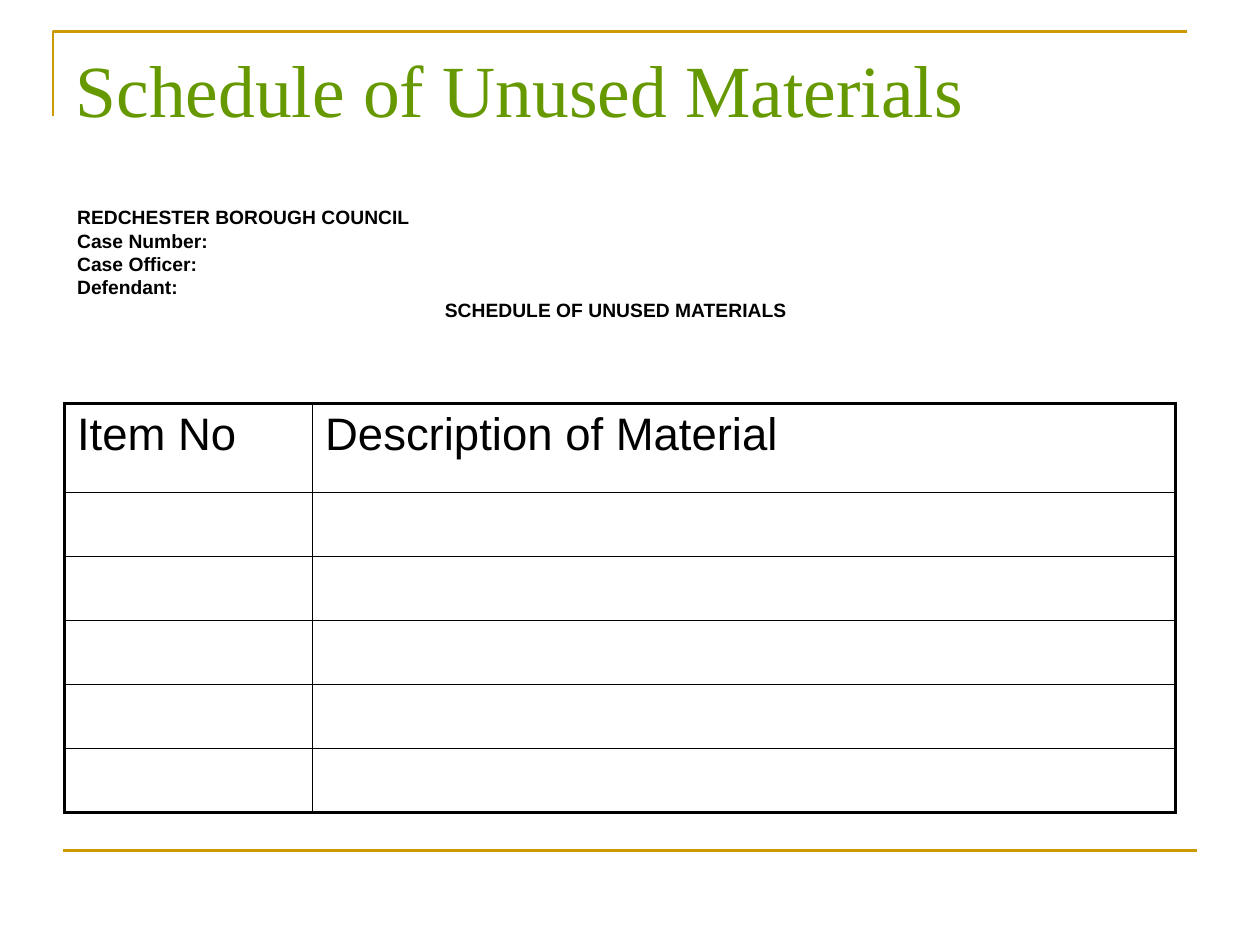
from lxml import etree
from pptx import Presentation
from pptx import util as u
from pptx.dml.color import RGBColor
from pptx.enum import shapes, text
from pptx.oxml.ns import qn


def color(value):
    return RGBColor.from_string(value)


def border(cell, side, width):
    ln = etree.SubElement(cell._tc.get_or_add_tcPr(), qn("a:" + side), w=str(u.Pt(width)))
    fill = etree.SubElement(ln, qn("a:solidFill"))
    etree.SubElement(fill, qn("a:srgbClr"), val="000000")


prs = Presentation()
prs.slide_width, prs.slide_height = u.Cm(25.4), u.Cm(19.05)
s = prs.slides.add_slide(prs.slide_layouts[1])

fb = s.shapes.build_freeform(u.Cm(1.07), u.Cm(2.34))
fb.add_line_segments([(u.Cm(1.07), u.Cm(0.64)), (u.Cm(23.93), u.Cm(0.64))], close=False)
corner = fb.convert_to_shape()
corner.shadow.inherit = False
corner.fill.background()
rule = s.shapes.add_connector(shapes.MSO_CONNECTOR.STRAIGHT,
                              u.Cm(1.27), u.Cm(17.15), u.Cm(24.13), u.Cm(17.15))
etree.SubElement(rule._element.spPr, qn("a:effectLst"))
for sp in (corner, rule):
    sp.line.color.rgb = color("CC9900")
    sp.line.width = u.Pt(1.5)

title, body = s.shapes.title, s.placeholders[1]
title.left, title.top, title.width, title.height = u.Cm(1.27), u.Cm(0.76), u.Cm(22.86), u.Cm(3.18)
body.left, body.top, body.width, body.height = u.Cm(1.3), u.Cm(4.11), u.Cm(22.23), u.Cm(3)
for sp in (title, body):
    sp.text_frame.auto_size = text.MSO_AUTO_SIZE.NONE
    sp.text_frame.vertical_anchor = text.MSO_ANCHOR.TOP

title.text_frame.text = "Schedule of Unused Materials"
p = title.text_frame.paragraphs[0]
p.alignment = text.PP_ALIGN.LEFT
r = p.runs[0]
r.font.name, r.font.size = "Times New Roman", u.Pt(42)
r.font.color.rgb = color("669900")

body.text_frame.text = "\n".join(["REDCHESTER BOROUGH COUNCIL", "Case Number:", "Case Officer:",
                                  "Defendant:", "SCHEDULE OF UNUSED MATERIALS"])
for p in body.text_frame.paragraphs:
    p.line_spacing, p.space_before = 0.8, u.Pt(2.7)
    pPr = p._p.get_or_add_pPr()
    pPr.set("marL", "0")
    pPr.set("indent", "0")
    etree.SubElement(pPr, qn("a:buNone"))
    r = p.runs[0]
    r.font.name, r.font.size, r.font.bold = "Arial", u.Pt(11), True
    r.font.color.rgb = color("000000")
p.alignment = text.PP_ALIGN.CENTER

headers = ["Item No", "Description of Material"]
n_rows = 6
tbl = s.shapes.add_table(n_rows, len(headers), u.Cm(1.3), u.Cm(8.13), u.Cm(22.4), u.Cm(8.25)).table
tbl.first_row = tbl.horz_banding = False
tbl.columns[0].width, tbl.columns[1].width = u.Cm(5), u.Cm(17.4)
for i, row in enumerate(tbl.rows):
    row.height = u.Cm(1.29 if i else 1.8)
    for j, cell in enumerate(row.cells):
        border(cell, "lnL", 1 if j else 2.25)
        border(cell, "lnR", 2.25 if j else 1)
        border(cell, "lnT", 1 if i else 2.25)
        border(cell, "lnB", 2.25 if i == n_rows - 1 else 1)
        cell.fill.background()

for cell, label in zip(tbl.rows[0].cells, headers):
    cell.text_frame.text = label
    r = cell.text_frame.paragraphs[0].runs[0]
    r.font.name, r.font.size = "Arial", u.Pt(26)
    r.font.color.rgb = color("000000")

prs.save("out.pptx")
